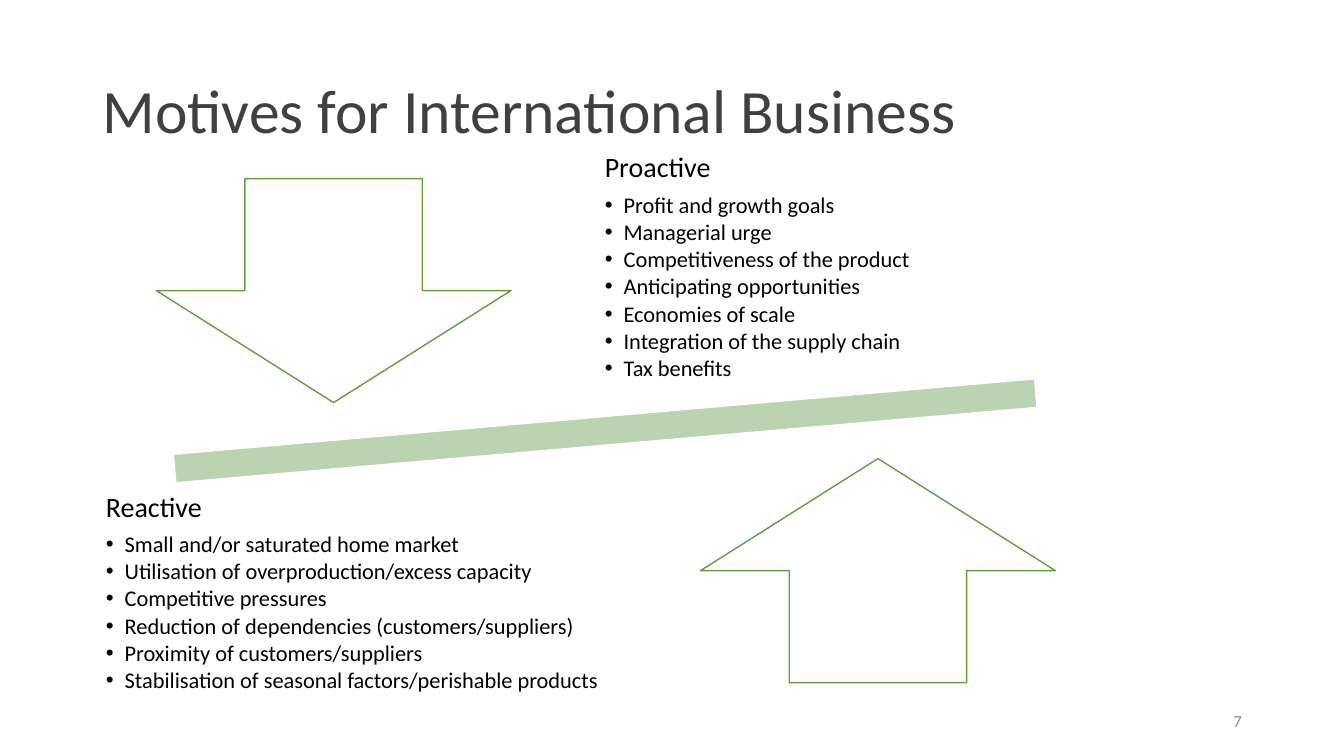
from pptx import Presentation
from pptx.dml.color import RGBColor
from pptx.enum import shapes, text
from pptx.oxml import parse_xml
from pptx.oxml.ns import nsdecls
from pptx.util import Pt

TITLE = "Motives for International Business"
# box (left, top, width, height), heading, points
MOTIVES = [
    ((420.5, 107.3, 345.6, 167.8), "Proactive", [
        "Profit and growth goals",
        "Managerial urge",
        "Competitiveness of the product",
        "Anticipating opportunities",
        "Economies of scale",
        "Integration of the supply chain",
        "Tax benefits",
    ]),
    ((64.1, 339.8, 416.2, 167.8), "Reactive", [
        "Small and/or saturated home market",
        "Utilisation of overproduction/excess capacity",
        "Competitive pressures",
        "Reduction of dependencies (customers/suppliers)",
        "Proximity of customers/suppliers",
        "Stabilisation of seasonal factors/perishable products",
    ]),
]
KIND = shapes.MSO_SHAPE
# preset, box, fill, line, rotation
SHAPES = [
    (KIND.MATH_MINUS, (12.2, 264.2, 840.2, 87.1), "BBD3B1", "FFFFFF", 355),
    (KIND.DOWN_ARROW, (111.6, 127.6, 253.4, 160), "FFFFFF", "669D40", 0),
    (KIND.UP_ARROW, (500.4, 327.6, 253.4, 160), "FFFFFF", "669D40", 0),
]
INDENT = 13.5


def color(code):
    return RGBColor.from_string(code)


def place(box):
    return [Pt(n) for n in box]


def add_bullet(para):
    props = para._p.get_or_add_pPr()
    props.set("marL", str(Pt(INDENT)))
    props.set("indent", str(-Pt(INDENT)))
    for xml in ('<a:buFont {} typeface="Arial"/>', '<a:buChar {} char="•"/>'):
        props.append(parse_xml(xml.format(nsdecls("a"))))


def add_frame(box, inset=(7.2, 3.6)):
    frame = slide.shapes.add_textbox(*place(box)).text_frame
    frame.word_wrap = True
    frame.vertical_anchor = text.MSO_ANCHOR.MIDDLE
    frame.margin_left = frame.margin_right = Pt(inset[0])
    frame.margin_top = frame.margin_bottom = Pt(inset[1])
    return frame


def write(frame, words, size, ink="000000", after=0, lead=0.9,
          bullet=False, align=text.PP_ALIGN.LEFT):
    """Fill the first paragraph of the frame, or add one after the last."""
    para = frame.paragraphs[0]
    if para.runs:
        para = frame.add_paragraph()
    para.alignment = align
    para.line_spacing = lead
    para.space_before = Pt(0)
    para.space_after = Pt(after)
    if bullet:
        para.level = 1
        add_bullet(para)
    run = para.add_run()
    run.text = words
    run.font.name = "Calibri"
    run.font.size = Pt(size)
    run.font.color.rgb = color(ink)


deck = Presentation()
deck.slide_width, deck.slide_height = Pt(960), Pt(540)
slide = deck.slides.add_slide(deck.slide_layouts[6])

write(add_frame((66.2, 28.8, 828, 104.4)), TITLE, 44, "404041")

for kind, box, fill, line, turn in SHAPES:
    shape = slide.shapes.add_shape(kind, *place(box))
    shape.shadow.inherit = False
    shape.rotation = turn
    shape.fill.solid()
    shape.fill.fore_color.rgb = color(fill)
    shape.line.color.rgb = color(line)
    shape.line.width = Pt(1)

for box, head, points in MOTIVES:
    frame = add_frame(box, (11.5, 11.5))
    write(frame, head, 20, after=7)
    for point in points:
        write(frame, point, 16, after=2.2, bullet=True)

write(add_frame((678.2, 500.4, 216, 28.8)), "7", 12, "8C8C8C", lead=1,
      align=text.PP_ALIGN.RIGHT)

deck.save("out.pptx")
